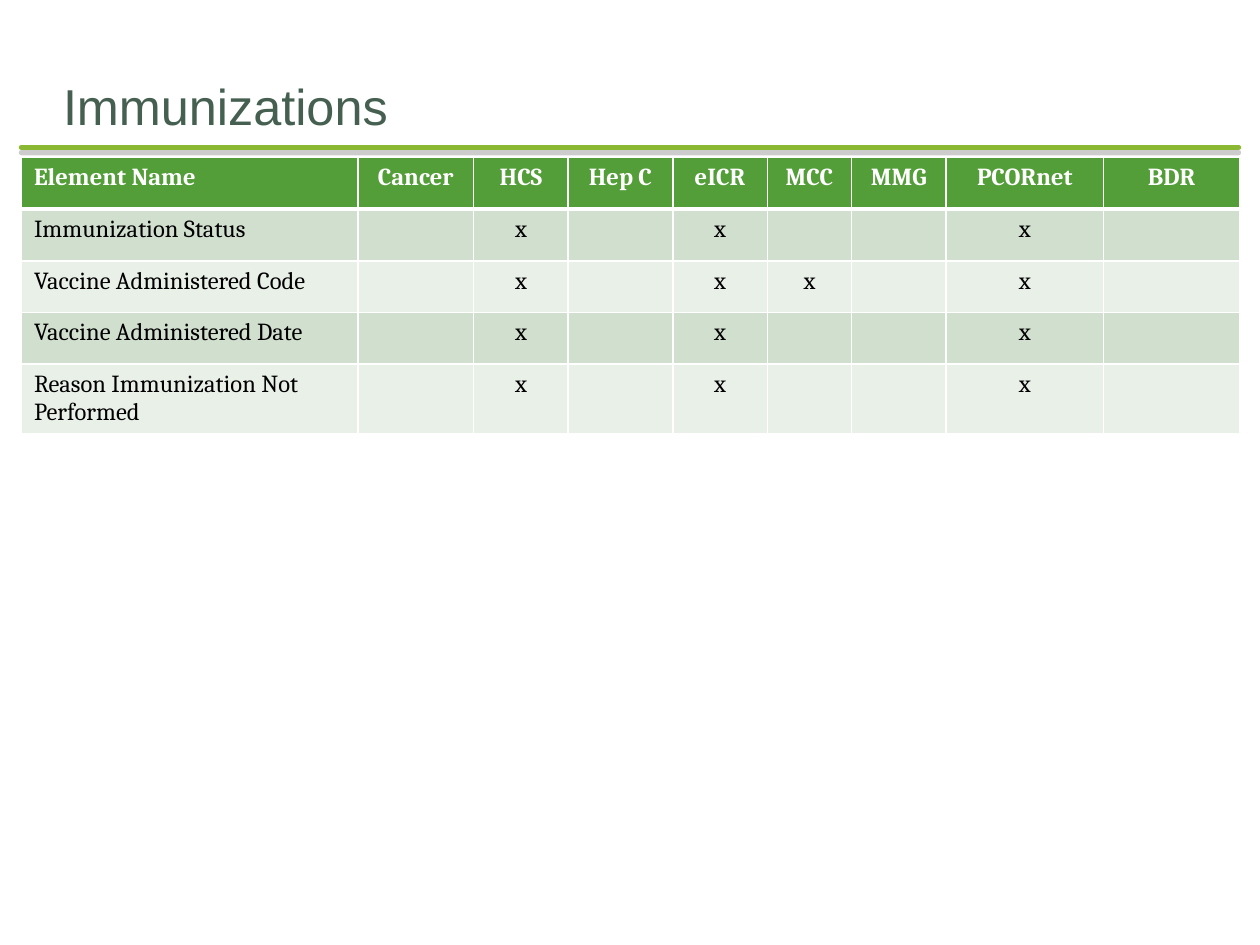
import pptx
import pptx.util
import pptx.dml.color
import pptx.enum.shapes
import pptx.enum.text
import pptx.oxml
import pptx.oxml.ns

Inches = pptx.util.Inches
Pt = pptx.util.Pt
RGBColor = pptx.dml.color.RGBColor
ALIGN = pptx.enum.text.PP_ALIGN

WHITE = RGBColor(0xFF, 0xFF, 0xFF)
BLACK = RGBColor(0, 0, 0)
SLATE = RGBColor(0x45, 0x5F, 0x51)
LIME = RGBColor(0x8A, 0xB8, 0x33)
GREEN = RGBColor(0x54, 0x9E, 0x39)
BANDS = (RGBColor(0xD1, 0xDF, 0xCE), RGBColor(0xE9, 0xF0, 0xE8))
GRAY = RGBColor(0x80, 0x80, 0x80)

LEFT = 0.17
HEADERS = ["Element Name", "Cancer", "HCS", "Hep C", "eICR", "MCC", "MMG", "PCORnet", "BDR"]
WIDTHS = [2.67, 0.92, 0.75, 0.83, 0.75, 0.67, 0.75, 1.25, 1.08]
HEIGHTS = [0.41, 0.41, 0.41, 0.41, 0.55]
ELEMENTS = {
    "Immunization Status": {"HCS", "eICR", "PCORnet"},
    "Vaccine Administered Code": {"HCS", "eICR", "MCC", "PCORnet"},
    "Vaccine Administered Date": {"HCS", "eICR", "PCORnet"},
    "Reason Immunization Not Performed": {"HCS", "eICR", "PCORnet"},
}


def write(tf, text, *, size, font, color, bold=False, align=ALIGN.LEFT):
    p = tf.paragraphs[0]
    p.alignment = align
    r = p.add_run()
    r.text = text
    r.font.size = Pt(size)
    r.font.name = font
    r.font.bold = bold
    r.font.color.rgb = color


def add_title(s, text):
    sp = s.shapes.title
    sp.left, sp.top, sp.width, sp.height = Inches(0.5), Inches(0.5), Inches(9), Inches(0.58)
    tf = sp.text_frame
    tf.word_wrap = True
    tf.auto_size = pptx.enum.text.MSO_AUTO_SIZE.NONE
    tf.vertical_anchor = pptx.enum.text.MSO_ANCHOR.BOTTOM
    tf.margin_left = tf.margin_right = tf.margin_bottom = 0
    tf.margin_top = Inches(0.05)
    write(tf, text, size=28.8, font="Arial", color=SLATE)


def add_rule(s, y):
    line = s.shapes.add_connector(
        pptx.enum.shapes.MSO_CONNECTOR.STRAIGHT,
        Inches(LEFT), Inches(y), Inches(10 - LEFT), Inches(y))
    line.line.color.rgb = LIME
    line.line.width = Pt(3)
    line.line._get_or_add_ln().set("cap", "rnd")
    line._element.spPr.append(pptx.oxml.parse_xml(
        f'<a:effectLst {pptx.oxml.ns.nsdecls("a")}>'
        f'<a:outerShdw blurRad="0" dist="{Pt(3)}" dir="5400000" rotWithShape="0">'
        f'<a:srgbClr val="{GRAY}"><a:alpha val="40000"/></a:srgbClr>'
        '</a:outerShdw></a:effectLst>'))


def set_borders(cell, **widths):
    tcPr = cell._tc.get_or_add_tcPr()
    for side, width in widths.items():
        tcPr.append(pptx.oxml.parse_xml(
            f'<a:ln{side} {pptx.oxml.ns.nsdecls("a")} w="{Pt(width)}">'
            f'<a:solidFill><a:srgbClr val="{WHITE}"/></a:solidFill></a:ln{side}>'))


def add_matrix(s):
    rows = [HEADERS] + [
        [name] + ["x" if h in marks else "" for h in HEADERS[1:]]
        for name, marks in ELEMENTS.items()]
    table = s.shapes.add_table(
        len(rows), len(HEADERS), Inches(LEFT), Inches(1.25),
        Inches(sum(WIDTHS)), Inches(sum(HEIGHTS))).table
    for column, width in zip(table.columns, WIDTHS):
        column.width = Inches(width)
    for i, (row, height) in enumerate(zip(rows, HEIGHTS)):
        table.rows[i].height = Inches(height)
        header = i == 0
        for j, text in enumerate(row):
            cell = table.cell(i, j)
            set_borders(cell, L=1, R=1, T=3 if i == 1 else 1, B=3 if header else 1)
            cell.fill.solid()
            cell.fill.fore_color.rgb = GREEN if header else BANDS[(i - 1) % 2]
            write(cell.text_frame, text, size=14, font="Cambria",
                  color=WHITE if header else BLACK, bold=header,
                  align=ALIGN.CENTER if j else ALIGN.LEFT)


def main():
    prs = pptx.Presentation()
    prs.slide_width, prs.slide_height = Inches(10), Inches(7.5)
    s = prs.slides.add_slide(prs.slide_layouts[5])
    add_rule(s, 1.17)
    add_title(s, "Immunizations")
    add_matrix(s)
    prs.save("out.pptx")


if __name__ == "__main__":
    main()
